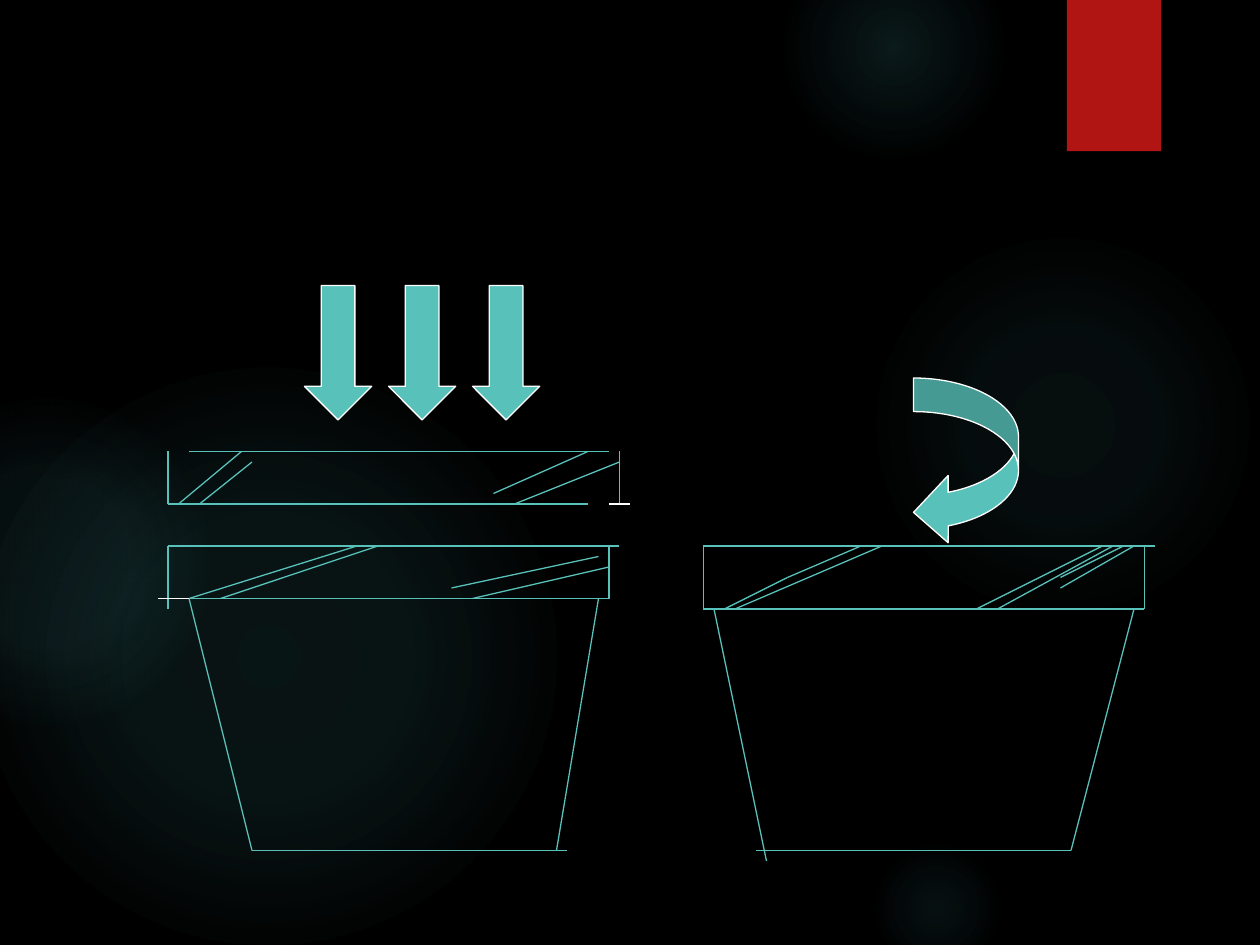
from pptx import Presentation
from pptx.dml.color import RGBColor
from pptx.enum.dml import MSO_LINE
from pptx.enum.shapes import MSO_CONNECTOR, MSO_SHAPE
from pptx.oxml import parse_xml
from pptx.oxml.ns import nsdecls, qn
from pptx.util import Inches, Pt

OVAL, RECT = MSO_SHAPE.OVAL, MSO_SHAPE.RECTANGLE
DOWN, CURVE = MSO_SHAPE.DOWN_ARROW, MSO_SHAPE.CURVED_LEFT_ARROW
STRAIGHT = MSO_CONNECTOR.STRAIGHT
COLORS = {"back": "000000", "teal": "58C1BA", "white": "FFFFFF",
          "red": "B01513", "glow": "50B9C1"}
STROKE = {"width": Pt(0.75), "dash_style": MSO_LINE.SOLID}


class Board:
    """Draws on one slide, on a grid of twelve cells to the inch."""

    def __init__(self, deck):
        self.slide = deck.slides.add_slide(deck.slide_layouts[6])
        self.cell = Inches(1) / 12
        self.paint(self.slide.background.fill, "back")

    def paint(self, fill, color):
        fill.solid()
        fill.fore_color.rgb = RGBColor.from_string(COLORS[color])

    def stroke(self, line, color):
        self.paint(line.fill, color)
        for key, value in STROKE.items():
            setattr(line, key, value)

    def grid(self, *cells):
        return [round(n * self.cell) for n in cells]

    def shape(self, kind, box, fill, edge=None, adjust=()):
        item = self.slide.shapes.add_shape(kind, *self.grid(*box))
        item.shadow.inherit = False
        self.paint(item.fill, fill)
        if edge:
            self.stroke(item.line, edge)
        else:
            item.line.fill.background()
        for i, value in enumerate(adjust):
            item.adjustments[i] = value
        return item

    def glow(self, left, top, size, stops):
        item = self.shape(OVAL, (left, top, size, size), "glow")
        marks = "".join(
            f'<a:gs pos="{pos * 1000}"><a:srgbClr val="{COLORS["glow"]}">'
            f'<a:alpha val="{alpha * 1000}"/></a:srgbClr></a:gs>'
            for pos, alpha in stops)
        props = item._element.spPr
        props.replace(props.find(qn("a:solidFill")), parse_xml(
            f'<a:gradFill {nsdecls("a")} rotWithShape="1"><a:gsLst>{marks}</a:gsLst>'
            '<a:path path="circle"><a:fillToRect l="50000" t="50000" r="50000" '
            'b="50000"/></a:path></a:gradFill>'))

    def line(self, ends, color="teal"):
        item = self.slide.shapes.add_connector(STRAIGHT, *self.grid(*ends))
        self.stroke(item.line, color)
        item._element.spPr.append(parse_xml(f'<a:effectLst {nsdecls("a")}/>'))


# Soft lights: left, top, size, stops of (position, opacity)
GLOWS = [
    (82.7, 22, 37, [(0, 7), (36, 6), (69, 0)]),
    (74.6, -6, 21, [(0, 14), (36, 7), (73, 0)]),
    (82.7, 80, 13, [(0, 9), (36, 5), (66, 0)]),
    (-2, 35, 55, [(0, 11), (36, 10), (75, 0)]),
    (-11, 38, 31, [(0, 8), (36, 8), (72, 0)]),
]

# Line ends in cells: x1, y1, x2, y2
LINES = {
    "left pot": [(24, 81, 54, 81), (57, 57, 53, 81), (18, 57, 24, 81)],
    "left rim": [(18, 57, 58, 57), (16, 52, 59, 52), (58, 52, 58, 57),
                 (16, 52, 16, 58)],
    "left rim shine": [(58, 54, 45, 57), (57, 53, 43, 56), (34, 52, 18, 57),
                       (36, 52, 21, 57)],
    "lid": [(18, 43, 58, 43), (16, 48, 56, 48), (59, 43, 59, 48),
            (16, 43, 16, 48)],
    "lid shine": [(23, 43, 17, 48), (24, 44, 19, 48), (59, 44, 49, 48),
                  (56, 43, 47, 47)],
    "right pot": [(72, 81, 102, 81), (68, 58, 73, 82), (108, 58, 102, 81)],
    "right rim": [(67, 58, 109, 58), (67, 52, 110, 52), (109, 52, 109, 58),
                  (67, 52, 67, 58)],
    "right rim shine": [(84, 52, 70, 58), (75, 55, 69, 58), (75, 55, 82, 52),
                        (105, 52, 93, 58), (106, 52, 95, 58),
                        (101, 56, 108, 52), (101, 55, 107, 52)],
}
TIPS = [(16, 57, 15, 57), (18, 57, 16, 57), (58, 48, 60, 48)]


def main():
    deck = Presentation()
    deck.slide_width, deck.slide_height = Inches(10), Inches(7.5)
    board = Board(deck)

    # Backdrop
    for spot in GLOWS:
        board.glow(*spot)
    board.shape(RECT, (101.6, 0, 9, 14.4), "red")

    # Pots, rims and lid
    for part in LINES.values():
        for ends in part:
            board.line(ends)
    for ends in TIPS:
        board.line(ends, "white")

    # Push arrows and turn arrow
    for col in range(3):
        board.shape(DOWN, (29 + 8 * col, 27.2, 6.4, 12.8), "teal", "white")
    board.shape(CURVE, (87, 36, 10, 16), "teal", "white", (0.32, 0.64, 0.33))

    deck.save("out.pptx")


if __name__ == "__main__":
    main()
